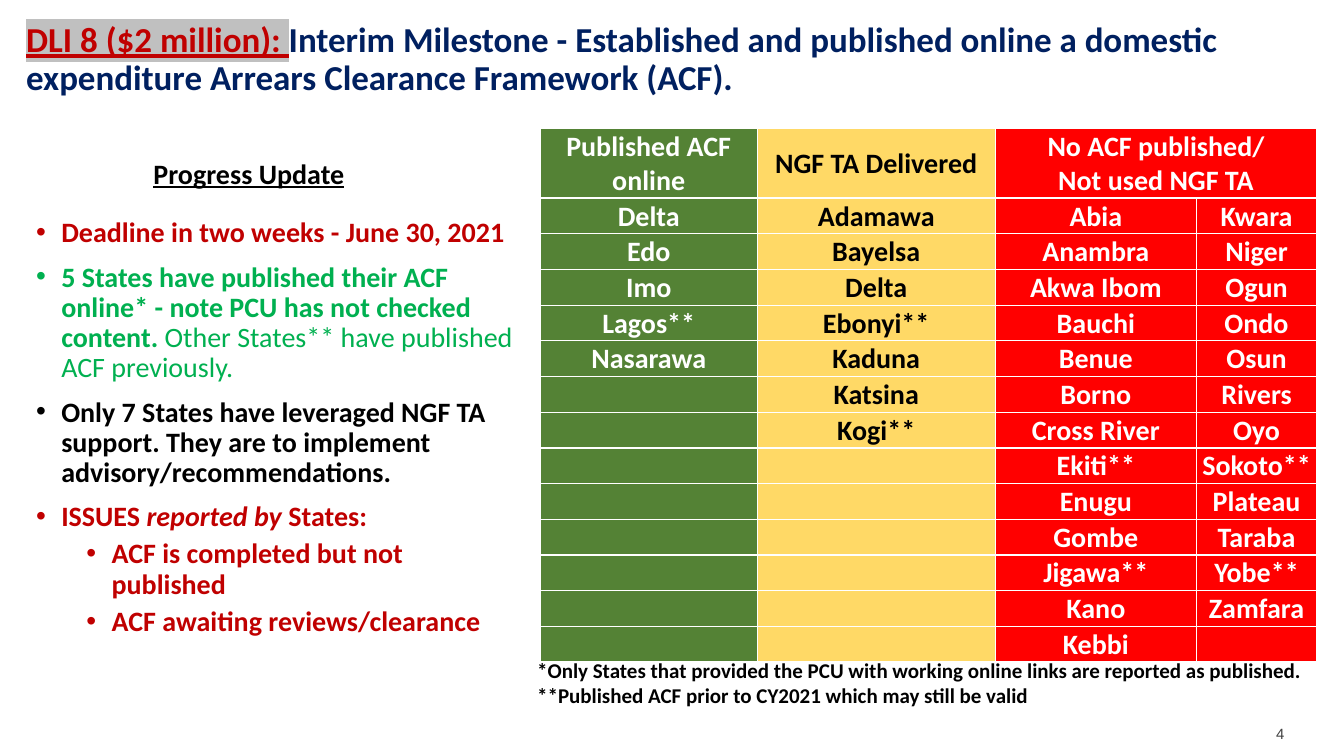
from dataclasses import dataclass
from itertools import zip_longest

from lxml.etree import SubElement
from pptx import Presentation
from pptx.dml.color import RGBColor
from pptx.enum.text import MSO_ANCHOR as Anchor, PP_ALIGN as Align
from pptx.oxml.ns import qn
from pptx.util import Pt

WHITE = RGBColor(0xFF, 0xFF, 0xFF)
BLACK = RGBColor(0x00, 0x00, 0x00)
NAVY = RGBColor(0x00, 0x20, 0x60)
CRIMSON = RGBColor(0xC0, 0x00, 0x00)
SILVER = RGBColor(0xC0, 0xC0, 0xC0)
EMERALD = RGBColor(0x00, 0xB0, 0x50)
GREEN = RGBColor(0x54, 0x82, 0x35)
YELLOW = RGBColor(0xFF, 0xD9, 0x66)
RED = RGBColor(0xFF, 0x00, 0x00)
GRAY = RGBColor(0x40, 0x40, 0x40)

HEADER_HEIGHT = 50
STATE_HEIGHT = 25.5


@dataclass(frozen=True)
class Phrase:
    text: str
    bold: bool | None = None
    italic: bool | None = None


@dataclass(frozen=True)
class Update:
    phrases: tuple[Phrase, ...]
    color: RGBColor
    indent: float = 18
    space_before: float = 10
    level: int = 0
    bold: bool | None = True


@dataclass(frozen=True)
class StateColumn:
    header: str
    width: float
    fill: RGBColor
    ink: RGBColor
    states: tuple[str, ...]


UPDATES = (
    Update((Phrase("Deadline in two weeks - June 30, 2021"),), CRIMSON),
    Update((Phrase("5 States have published their ACF online* - note PCU has not "
                   "checked content. ", bold=True),
            Phrase("Other States** have published ACF previously.", bold=False)),
           EMERALD, bold=None),
    Update((Phrase("Only 7 States have leveraged NGF TA support. They are to "
                   "implement advisory/recommendations."),), BLACK),
    Update((Phrase("ISSUES "), Phrase("reported by ", italic=True),
            Phrase("States:")), CRIMSON),
    Update((Phrase("ACF is completed but not published"),), CRIMSON, 54, 5, 1),
    Update((Phrase("ACF awaiting reviews/clearance"),), CRIMSON, 54, 5, 1),
)

STATE_COLUMNS = (
    StateColumn("Published ACF online", 154.8, GREEN, WHITE,
                ("Delta", "Edo", "Imo", "Lagos**", "Nasarawa")),
    StateColumn("NGF TA Delivered", 170.2, YELLOW, BLACK,
                ("Adamawa", "Bayelsa", "Delta", "Ebonyi**", "Kaduna", "Katsina",
                 "Kogi**")),
    StateColumn("No ACF published/\nNot used NGF TA", 143.6, RED, WHITE,
                ("Abia", "Anambra", "Akwa Ibom", "Bauchi", "Benue", "Borno",
                 "Cross River", "Ekiti**", "Enugu", "Gombe", "Jigawa**", "Kano",
                 "Kebbi")),
    StateColumn("", 86, RED, WHITE,
                ("Kwara", "Niger", "Ogun", "Ondo", "Osun", "Rivers", "Oyo",
                 "Sokoto**", "Plateau", "Taraba", "Yobe**", "Zamfara")),
)


def style(font, size: float, color: RGBColor, bold: bool | None = True,
          face: str = "Calibri") -> None:
    font.name, font.size, font.bold = face, Pt(size), bold
    font.color.rgb = color


def add_text(slide, left: float, top: float, width: float, height: float,
             text: str = "", size: float = 20, color: RGBColor = BLACK,
             bold: bool = True, face: str = "Calibri"):
    frame = slide.shapes.add_textbox(Pt(left), Pt(top), Pt(width),
                                     Pt(height)).text_frame
    frame.word_wrap = True
    if text:
        frame.text = text
        for paragraph in frame.paragraphs:
            style(paragraph.font, size, color, bold, face)
    return frame


def write_title(slide) -> None:
    title = slide.shapes.title
    title.left, title.top, title.width, title.height = (
        Pt(18.7), Pt(15.8), Pt(923.8), Pt(54.7))
    frame = title.text_frame
    frame.margin_left = frame.margin_top = frame.margin_right = frame.margin_bottom = 0
    frame.vertical_anchor = Anchor.TOP
    heading = frame.paragraphs[0]
    heading.alignment, heading.line_spacing = Align.LEFT, 0.9
    indicator = heading.add_run()
    indicator.text = "DLI 8 ($2 million): "
    style(indicator.font, 25, CRIMSON)
    indicator.font.underline = True
    properties = indicator.font.fill._xPr
    highlight = SubElement(properties, qn("a:highlight"))
    SubElement(highlight, qn("a:srgbClr"), val=str(SILVER))
    properties.find(qn("a:solidFill")).addnext(highlight)
    milestone = heading.add_run()
    milestone.text = ("Interim Milestone - Established and published online a domestic "
                      "expenditure Arrears Clearance Framework (ACF).")
    style(milestone.font, 25, NAVY)


def write_update(paragraph, update: Update) -> None:
    paragraph.level = update.level
    paragraph.line_spacing = 0.9
    paragraph.space_before = Pt(update.space_before)
    properties = paragraph._p.get_or_add_pPr()
    properties.set("marL", str(Pt(update.indent)))
    properties.set("indent", str(-Pt(18)))
    SubElement(properties, qn("a:buFont"), typeface="Arial")
    SubElement(properties, qn("a:buChar"), char="•")
    style(paragraph.font, 20, update.color, update.bold)
    for phrase in update.phrases:
        run = paragraph.add_run()
        run.text = phrase.text
        run.font.bold, run.font.italic = phrase.bold, phrase.italic


def add_border(cell, side: str, width: float) -> None:
    line = SubElement(cell._tc.get_or_add_tcPr(), qn(f"a:ln{side}"), w=str(Pt(width)))
    SubElement(SubElement(line, qn("a:solidFill")), qn("a:srgbClr"), val=str(WHITE))


def write_cell(cell, text: str, column: StateColumn, row: int) -> None:
    cell.margin_left = cell.margin_right = cell.margin_top = Pt(0.7)
    cell.margin_bottom = 0
    cell.vertical_anchor = Anchor.MIDDLE
    add_border(cell, "L", 1)
    add_border(cell, "R", 1)
    add_border(cell, "T", 1.5 if row == 1 else 1)
    add_border(cell, "B", 1.5 if row == 0 else 1)
    cell.fill.solid()
    cell.fill.fore_color.rgb = column.fill
    cell.text = text
    for paragraph in cell.text_frame.paragraphs:
        paragraph.alignment = Align.CENTER
        style(paragraph.font, 20, column.ink)


def add_state_table(slide) -> None:
    state_rows = list(zip_longest(*(c.states for c in STATE_COLUMNS), fillvalue=""))
    rows = [tuple(c.header for c in STATE_COLUMNS), *state_rows]
    table = slide.shapes.add_table(
        len(rows), len(STATE_COLUMNS), Pt(386), Pt(91.6),
        Pt(sum(c.width for c in STATE_COLUMNS)),
        Pt(HEADER_HEIGHT + STATE_HEIGHT * len(state_rows))).table
    for grid_column, column in zip(table.columns, STATE_COLUMNS):
        grid_column.width = Pt(column.width)
    for row, texts in enumerate(rows):
        table.rows[row].height = Pt(STATE_HEIGHT if row else HEADER_HEIGHT)
        for index, (text, column) in enumerate(zip(texts, STATE_COLUMNS)):
            write_cell(table.cell(row, index), text, column, row)
    table.cell(0, 2).merge(table.cell(0, 3))


def main() -> None:
    deck = Presentation()
    deck.slide_width, deck.slide_height = Pt(960), Pt(540)
    slide = deck.slides.add_slide(deck.slide_layouts[5])
    write_title(slide)

    progress = add_text(slide, 18.7, 152.6, 357.8, 216.7)
    for index, update in enumerate(UPDATES):
        write_update(progress.add_paragraph() if index else progress.paragraphs[0], update)

    add_state_table(slide)
    add_text(slide, 376.6, 465.8, 583.2, 61.9,
             "*Only States that provided the PCU with working online links are "
             "reported as published.\n"
             "**Published ACF prior to CY2021 which may still be valid", 15)
    caption = add_text(slide, 43.2, 108, 269.3, 31.7, "Progress Update").paragraphs[0]
    caption.alignment = Align.CENTER
    caption.font.underline = True

    page = add_text(slide, 911.5, 515.5, 20.2, 15.1, "4", 10.6, GRAY, False, "Arial")
    page.margin_left = page.margin_right = page.margin_bottom = 0
    page.margin_top = Pt(2.2)
    deck.save("out.pptx")


if __name__ == "__main__":
    main()
